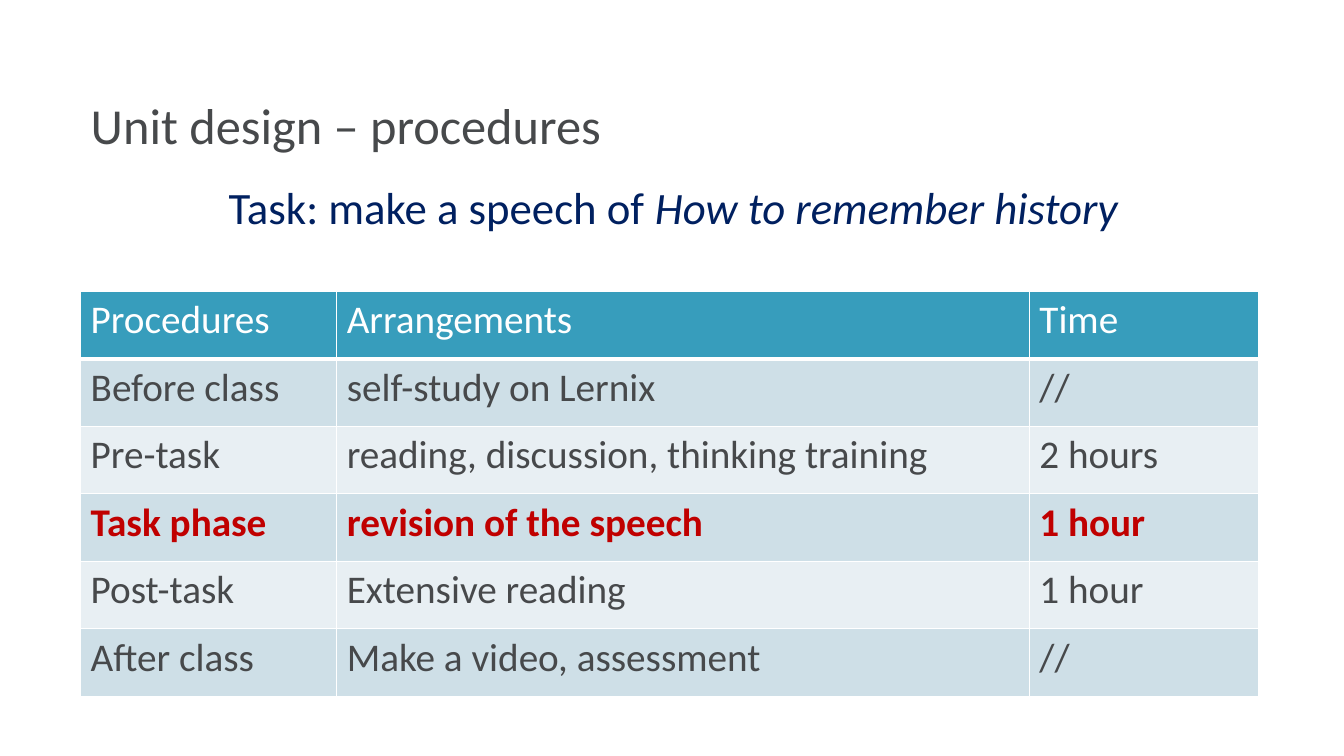
from lxml.etree import SubElement
from pptx import Presentation
from pptx.dml.color import RGBColor
from pptx.enum.text import MSO_ANCHOR, PP_ALIGN
from pptx.oxml.ns import qn
from pptx.util import Emu, Pt

EMU_PER_PX = 9144
FONT = "Calibri"
WHITE, GREY, NAVY, RED = "FFFFFF", "47494B", "002060", "C00000"
HEADER_FILL, BAND_FILLS = "379DBC", ("CEDFE7", "E8EFF3")
COLUMN_WIDTHS = (254, 687, 227)
ROW_HEIGHT = 67
PROCEDURES = (
    ("Procedures", "Arrangements", "Time"),
    ("Before class", "self-study on Lernix", "//"),
    ("Pre-task", "reading, discussion, thinking training", "2 hours"),
    ("Task phase", "revision of the speech", "1 hour"),
    ("Post-task", "Extensive reading", "1 hour"),
    ("After class", "Make a video, assessment", "//"),
)
KEY_ROW = 3


def px(value):
    return Emu(value * EMU_PER_PX)


def color(hex_value):
    return RGBColor.from_string(hex_value)


def format_font(paragraph, size, hex_value, bold=False):
    font = paragraph.font
    font.name, font.size, font.bold = FONT, Pt(size), bold
    font.color.rgb = color(hex_value)


def set_title(slide, text):
    title = slide.shapes.title
    title.left, title.top, title.width, title.height = map(px, (80, 88, 1200, 70))
    title.text_frame.text = text
    title.text_frame.vertical_anchor = MSO_ANCHOR.MIDDLE
    paragraph = title.text_frame.paragraphs[0]
    paragraph.alignment = PP_ALIGN.LEFT
    format_font(paragraph, 36, GREY)


def add_task(slide, lead, topic):
    """Add the centred task line with its topic in italics."""
    box = slide.shapes.add_textbox(*map(px, (68, 173, 1200, 70)))
    box.text_frame.word_wrap = True
    paragraph = box.text_frame.paragraphs[0]
    paragraph.alignment = PP_ALIGN.CENTER
    format_font(paragraph, 32, NAVY)
    paragraph.add_run().text = lead
    topic_run = paragraph.add_run()
    topic_run.text = topic
    topic_run.font.italic = True


def set_borders(cell, bottom_width):
    properties = cell._tc.get_or_add_tcPr()
    widths = {"a:lnL": 1, "a:lnR": 1, "a:lnT": 1, "a:lnB": bottom_width}
    for tag, width in widths.items():
        line = SubElement(properties, qn(tag), w=str(Pt(width)))
        fill = SubElement(line, qn("a:solidFill"))
        SubElement(fill, qn("a:srgbClr"), val=WHITE)


def format_cell(cell, text, row):
    is_header, is_key = row == 0, row == KEY_ROW
    set_borders(cell, 3 if is_header else 1)
    cell.fill.solid()
    fill = HEADER_FILL if is_header else BAND_FILLS[(row - 1) % 2]
    cell.fill.fore_color.rgb = color(fill)
    cell.text = text
    text_color = WHITE if is_header else RED if is_key else GREY
    format_font(cell.text_frame.paragraphs[0], 28, text_color, is_key)


def add_procedures(slide):
    rows, columns = len(PROCEDURES), len(COLUMN_WIDTHS)
    frame = (80, 289, sum(COLUMN_WIDTHS), rows * ROW_HEIGHT)
    table = slide.shapes.add_table(rows, columns, *map(px, frame)).table
    for column, width in zip(table.columns, COLUMN_WIDTHS):
        column.width = px(width)
    for row, texts in enumerate(PROCEDURES):
        table.rows[row].height = px(ROW_HEIGHT)
        for column, text in enumerate(texts):
            format_cell(table.cell(row, column), text, row)


def main():
    presentation = Presentation()
    presentation.slide_width, presentation.slide_height = px(1333), px(750)
    slide = presentation.slides.add_slide(presentation.slide_layouts[5])
    set_title(slide, "Unit design – procedures")
    add_procedures(slide)
    add_task(slide, "Task: make a speech of ", "How to remember history")
    presentation.save("out.pptx")


if __name__ == "__main__":
    main()
